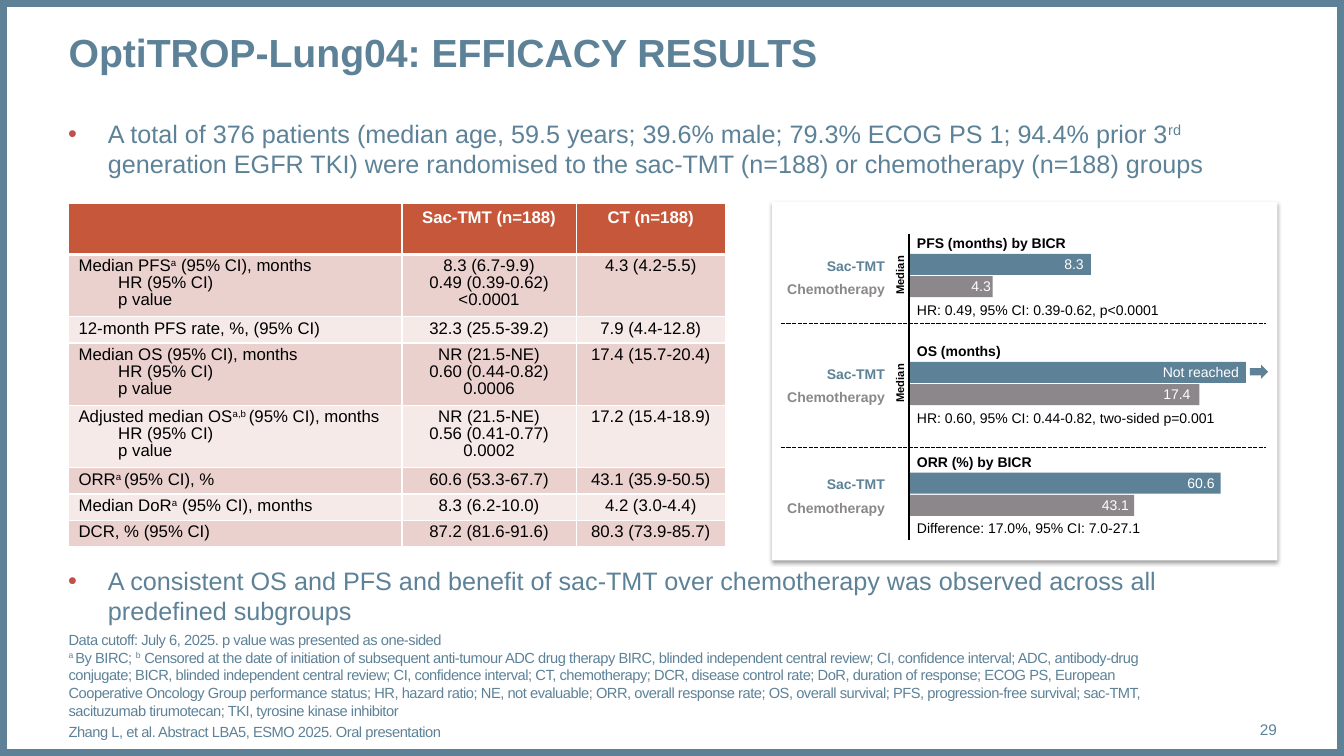
from dataclasses import dataclass

from lxml.etree import SubElement
from pptx import Presentation
from pptx.dml.color import RGBColor
from pptx.enum.dml import MSO_LINE
from pptx.enum.shapes import MSO_CONNECTOR, MSO_SHAPE
from pptx.enum.text import MSO_ANCHOR, PP_ALIGN
from pptx.oxml.ns import qn
from pptx.util import Cm, Pt

BLUE, GREY, WHITE, BLACK = "5D8298", "8B878B", "FFFFFF", "000000"
HEADER, BAND_DARK, BAND_LIGHT, BULLET = "C6573B", "EAD1CE", "F5EAE8", "C0504D"

TABLE_ROWS = [
    (["Median PFS^a^ (95% CI), months", "HR (95% CI)", "p value"],
     ["8.3 (6.7-9.9)", "0.49 (0.39-0.62)", "<0.0001"], ["4.3 (4.2-5.5)"]),
    (["12-month PFS rate, %, (95% CI)"], ["32.3 (25.5-39.2)"], ["7.9 (4.4-12.8)"]),
    (["Median OS (95% CI), months", "HR (95% CI)", "p value"],
     ["NR (21.5-NE)", "0.60 (0.44-0.82)", "0.0006"], ["17.4 (15.7-20.4)"]),
    (["Adjusted median OS^a,b ^(95% CI), months", "HR (95% CI)", "p value"],
     ["NR (21.5-NE)", "0.56 (0.41-0.77)", "0.0002"], ["17.2 (15.4-18.9)"]),
    (["ORR^a ^(95% CI), %"], ["60.6 (53.3-67.7)"], ["43.1 (35.9-50.5)"]),
    (["Median DoR^a^ (95% CI), months"], ["8.3 (6.2-10.0)"], ["4.2 (3.0-4.4)"]),
    (["DCR, % (95% CI)"], ["87.2 (81.6-91.6)"], ["80.3 (73.9-85.7)"]),
]

FOOTNOTES = [
    "Data cutoff: July 6, 2025. p value was presented as one-sided",
    "^a ^By BIRC; ^b^ Censored at the date of initiation of subsequent anti-tumour ADC drug "
    "therapy BIRC, blinded independent central review; CI, confidence interval; ADC, "
    "antibody-drug conjugate; BICR, blinded independent central review; CI, confidence "
    "interval; CT, chemotherapy; DCR, disease control rate; DoR, duration of response; "
    "ECOG PS, European Cooperative Oncology Group performance status; HR, hazard ratio; "
    "NE, not evaluable; ORR, overall response rate; OS, overall survival; PFS, "
    "progression-free survival; sac-TMT, sacituzumab tirumotecan; TKI, tyrosine kinase inhibitor",
    "Zhang L, et al. Abstract LBA5, ESMO 2025. Oral presentation",
]


@dataclass
class Box:
    left: float
    top: float
    width: float
    height: float

    def lengths(self):
        return Cm(self.left), Cm(self.top), Cm(self.width), Cm(self.height)

    def inner(self, x, y, width, height):
        return Box(self.left + x, self.top + y, width, height)


def ink(color):
    return RGBColor.from_string(color)


def assign(target, values):
    for name, value in values.items():
        setattr(target, name, value)


def write(para, text, size, color, bold=False, spacing=0, **layout):
    assign(para, layout)
    for index, piece in enumerate(text.split("^")):
        if not piece:
            continue
        span = para.add_run()
        span.text = piece
        assign(span.font, {"name": "Arial", "size": Pt(size), "bold": bold})
        span.font.color.rgb = ink(color)
        properties = span.font._element
        if index % 2:
            properties.set("baseline", "30000")
        if spacing:
            properties.set("spc", str(spacing))


def add_text(page, box, text="", size=10, color=BLACK, wrap=False, anchor=MSO_ANCHOR.TOP,
             rotation=0, **style):
    shape = page.shapes.add_textbox(*box.lengths())
    shape.rotation = rotation
    frame = shape.text_frame
    assign(frame, {"word_wrap": wrap, "vertical_anchor": anchor, "margin_left": 0,
                   "margin_right": 0, "margin_top": 0, "margin_bottom": 0})
    if text:
        write(frame.paragraphs[0], text, size, color, **style)
    return frame


def add_block(page, box, color, kind=MSO_SHAPE.RECTANGLE):
    shape = page.shapes.add_shape(kind, *box.lengths())
    shape.shadow.inherit = False
    shape.fill.solid()
    shape.fill.fore_color.rgb = ink(color)
    shape.line.fill.background()
    return shape


def add_rule(page, x1, y1, x2, y2, dash=None):
    rule = page.shapes.add_connector(MSO_CONNECTOR.STRAIGHT, Cm(x1), Cm(y1), Cm(x2), Cm(y2))
    assign(rule.line, {"width": Pt(1), "dash_style": dash})
    rule.line.color.rgb = ink(BLACK)
    SubElement(rule._element.spPr, qn("a:effectLst"))


def add_frame(page, box):
    frame = page.shapes.add_shape(MSO_SHAPE.RECTANGLE, *box.lengths())
    frame.shadow.inherit = False
    frame.fill.background()
    frame.line.color.rgb = ink(BLUE)
    frame.line.width = Pt(10)


def add_bullet(page, box, text):
    para = add_text(page, box, wrap=True).paragraphs[0]
    properties = para._p.get_or_add_pPr()
    properties.set("marL", str(Cm(1)))
    properties.set("indent", str(-Cm(1)))
    SubElement(SubElement(properties, qn("a:buClr")), qn("a:srgbClr"), val=BULLET)
    SubElement(properties, qn("a:buFont"), typeface="Arial")
    SubElement(properties, qn("a:buChar"), char="•")
    write(para, text, 18, BLUE)


def add_footnotes(page, box):
    frame = add_text(page, box, wrap=True, anchor=MSO_ANCHOR.BOTTOM)
    for index, note in enumerate(FOOTNOTES):
        para = frame.add_paragraph() if index else frame.paragraphs[0]
        write(para, note, 10.5, BLUE, spacing=-30, space_before=Pt(3 if index == 2 else 0))


def style_cell(cell, fill, bottom=1):
    properties = cell._tc.get_or_add_tcPr()
    for side in "LRTB":
        width = Pt(bottom if side == "B" else 1)
        line = SubElement(properties, qn(f"a:ln{side}"), w=str(width))
        SubElement(SubElement(line, qn("a:solidFill")), qn("a:srgbClr"), val=WHITE)
    cell.fill.solid()
    cell.fill.fore_color.rgb = ink(fill)


def add_results_table(page, box):
    table = page.shapes.add_table(len(TABLE_ROWS) + 1, 3, *box.lengths()).table
    assign(table, {"first_row": False, "horz_banding": False})
    for column, width in zip(table.columns, (8.4, 4.39, 3.76)):
        column.width = Cm(width)
    table.rows[0].height = Cm(1.28)
    for cell, text in zip(table.rows[0].cells, ("", "Sac-TMT (n=188)", "CT (n=188)")):
        style_cell(cell, HEADER, bottom=3)
        write(cell.text_frame.paragraphs[0], text, 12, WHITE, True, alignment=PP_ALIGN.CENTER)
    for number, entries in enumerate(TABLE_ROWS, 1):
        row = table.rows[number]
        row.height = Cm(1.56 if len(entries[0]) == 3 else 0.66)
        for column, lines in enumerate(entries):
            cell = row.cells[column]
            style_cell(cell, BAND_DARK if number % 2 else BAND_LIGHT)
            assign(cell, {"margin_left": Cm(0.25), "margin_right": Cm(0.25),
                          "margin_top": Cm(0.1), "margin_bottom": Cm(0.1)})
            for index, text in enumerate(lines):
                frame = cell.text_frame
                para = frame.add_paragraph() if index else frame.paragraphs[0]
                if column == 0 and index:
                    para._p.get_or_add_pPr().set("marL", str(Cm(1)))
                write(para, text, 12, BLACK, line_spacing=0.9,
                      alignment=PP_ALIGN.CENTER if column else PP_ALIGN.LEFT)


def add_bar_group(page, box, heading, heading_width, note, note_width, bars, median=True):
    add_text(page, box.inner(3.65, -0.48, heading_width, 0.43), heading, bold=True)
    add_text(page, box.inner(3.65, 1.19, note_width, 0.43), note)
    names = (("Sac-TMT", BLUE, 1.47), ("Chemotherapy", GREY, 2.49))
    for index, ((name, color, name_width), bar) in enumerate(zip(names, bars)):
        width, value, value_width, gap = bar
        top = index * 0.56
        add_block(page, box.inner(3.48, top, width, 0.53), color)
        add_text(page, box.inner(2.84 - name_width, 0.08 + index * 0.6, name_width, 0.43),
                 name, color=color, bold=True, alignment=PP_ALIGN.RIGHT)
        add_text(page, box.inner(3.48 + width - gap - value_width, top + 0.04, value_width, 0.43),
                 value, color=WHITE, wrap=True, alignment=PP_ALIGN.RIGHT)
    if median:
        add_text(page, box.inner(2.71, 0.36, 1, 0.33), "Median", 8, bold=True, rotation=270)


def add_outcome_panel(page, box):
    panel = add_block(page, box, WHITE)
    shadow = SubElement(panel._element.spPr.find(qn("a:effectLst")), qn("a:outerShdw"),
                        blurRad=str(Pt(3.1)), dist=str(Pt(1.8)), dir="5400000", rotWithShape="0")
    shade = SubElement(shadow, qn("a:srgbClr"), val=BLACK)
    SubElement(shade, qn("a:alpha"), val="35000")
    groups = (
        (1.32, "PFS (months) by BICR", 3.81, "HR: 0.49, 95% CI: 0.39-0.62, p<0.0001", 6.2,
         ((4.55, "8.3", 0.8, 0.18), (2.08, "4.3", 0.8, 0.05)), True),
        (4.04, "OS (months)", 2.13, "HR: 0.60, 95% CI: 0.44-0.82, two-sided p=0.001", 7.54,
         ((8.46, "Not reached", 2.2, 0.18), (7.29, "17.4", 1, 0.23)), True),
        (6.83, "ORR (%) by BICR", 2.92, "Difference: 17.0%, 95% CI: 7.0-27.1", 5.66,
         ((7.82, "60.6", 1, 0.15), (5.64, "43.1", 1, 0.13)), False),
    )
    for top, *details in groups:
        add_bar_group(page, box.inner(0, top, box.width, 1.62), *details)
    add_block(page, box.inner(12.04, 4.11, 0.46, 0.36), BLUE, MSO_SHAPE.RIGHT_ARROW)
    axis = box.left + 3.45
    add_rule(page, axis, box.top + 0.81, axis, box.top + 8.53)
    for offset in (3.07, 6.2):
        level = box.top + offset
        add_rule(page, box.left + 0.22, level, box.left + 12.44, level, MSO_LINE.SQUARE_DOT)


def build_slide(page, box):
    add_frame(page, box)
    add_text(page, box.inner(1.73, 0.71, 30.45, 2.4), "OptiTROP-Lung04: EFFICACY RESULTS",
             28, BLUE, wrap=True, bold=True)
    add_bullet(page, box.inner(1.72, 2.98, 30.45, 1.65),
               "A total of 376 patients (median age, 59.5 years; 39.6% male; 79.3% ECOG PS 1; "
               "94.4% prior 3^rd ^generation EGFR TKI) were randomised to the sac-TMT (n=188) "
               "or chemotherapy (n=188) groups")
    add_results_table(page, box.inner(1.73, 5.13, 16.55, 8.6))
    add_outcome_panel(page, box.inner(19.46, 5.08, 12.73, 9.04))
    add_bullet(page, box.inner(1.72, 14.25, 29.9, 1.6),
               "A consistent OS and PFS and benefit of sac-TMT over chemotherapy was observed "
               "across all predefined subgroups")
    add_footnotes(page, box.inner(1.73, 17.65, 28.27, 1.02))
    add_text(page, box.inner(30, 17.86, 2.18, 1.02), "29", 11, BLUE, wrap=True,
             anchor=MSO_ANCHOR.MIDDLE, alignment=PP_ALIGN.RIGHT)


def main():
    deck = Presentation()
    assign(deck, {"slide_width": Cm(33.87), "slide_height": Cm(19.05)})
    page = deck.slides.add_slide(deck.slide_layouts[6])
    build_slide(page, Box(0, 0, 33.87, 19.05))
    deck.save("out.pptx")


if __name__ == "__main__":
    main()
